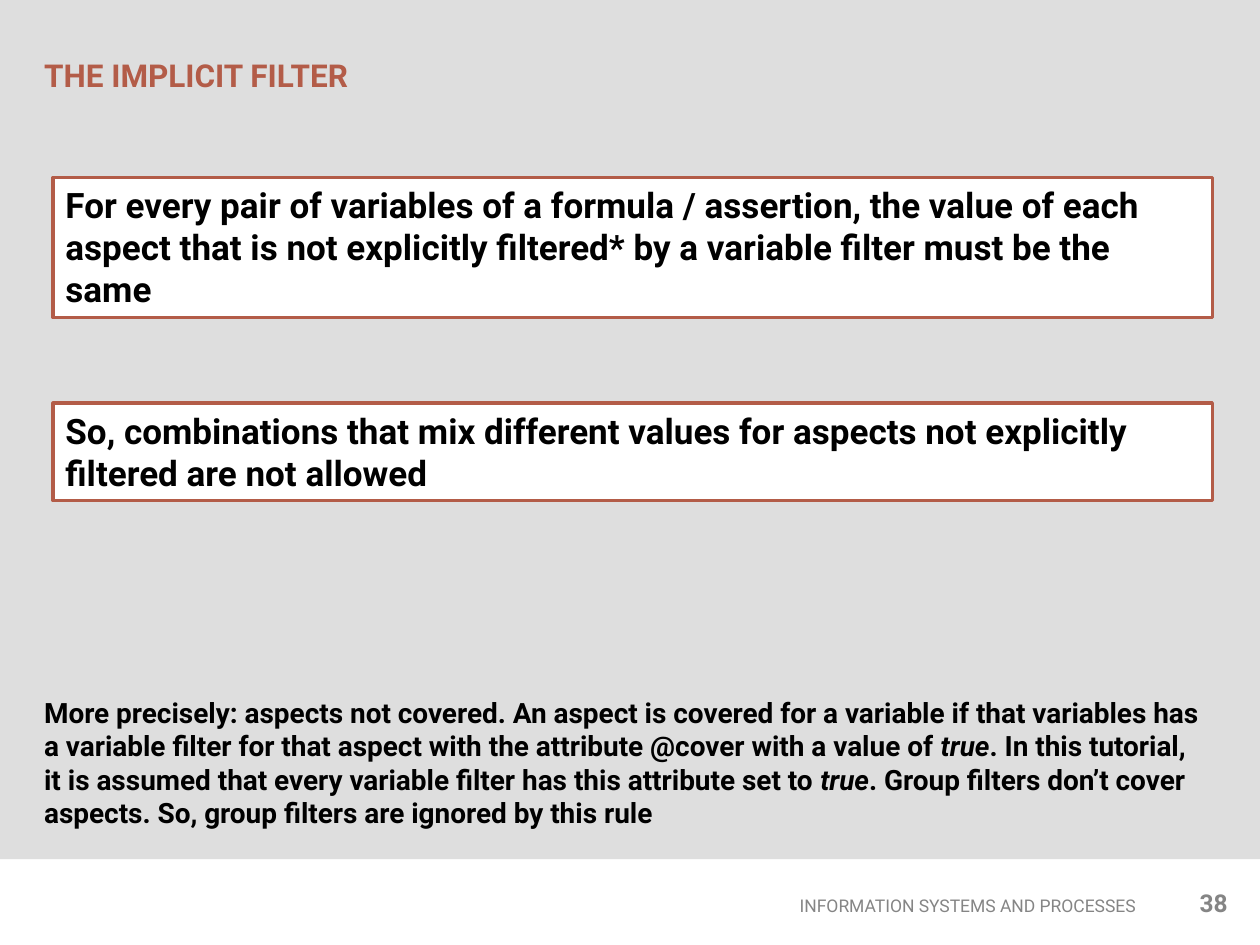
"""Build the slide about the implicit filter."""
from pptx import Presentation
from pptx.dml.color import RGBColor
from pptx.enum.shapes import MSO_SHAPE
from pptx.enum.text import MSO_ANCHOR, PP_ALIGN
from pptx.util import Cm, Pt

RECTANGLE = MSO_SHAPE.RECTANGLE
TOP, MIDDLE = MSO_ANCHOR.TOP, MSO_ANCHOR.MIDDLE
LEFT, RIGHT = PP_ALIGN.LEFT, PP_ALIGN.RIGHT

RUST = RGBColor(0xB3, 0x5C, 0x48)
PALE = RGBColor(0xDE, 0xDE, 0xDE)
GRAY = RGBColor(0x85, 0x85, 0x85)
BLACK = RGBColor(0x00, 0x00, 0x00)
WHITE = RGBColor(0xFF, 0xFF, 0xFF)


class SlideBuilder:
    font_name = "Roboto"
    line_width = Pt(2)

    def __init__(self, slide):
        self.slide = slide

    def fill_text(self, box, spans, size, color=BLACK, bold=True, align=LEFT, anchor=TOP):
        frame = box.text_frame
        frame.word_wrap = True
        frame.vertical_anchor = anchor
        para = frame.paragraphs[0]
        para.alignment = align
        for text, italic in spans:
            span = para.add_run()
            span.text = text
            font = span.font
            font.name = self.font_name
            font.size = Pt(size)
            font.bold = bold
            font.italic = italic
            font.color.rgb = color

    def label(self, place, spans, size, **style):
        box = self.slide.shapes.add_textbox(*map(Cm, place))
        self.fill_text(box, spans, size, **style)

    def panel(self, place, fill, line=None):
        box = self.slide.shapes.add_shape(RECTANGLE, *map(Cm, place))
        box.shadow.inherit = False
        box.fill.solid()
        box.fill.fore_color.rgb = fill
        if line is None:
            box.line.fill.background()
        else:
            box.line.color.rgb = line
            box.line.width = self.line_width
        return box

    def statement(self, top, height, text):
        box = self.panel((1.07, top, 23.37, height), WHITE, RUST)
        self.fill_text(box, [(text, False)], 20)


def main():
    deck = Presentation()
    deck.slide_width, deck.slide_height = Cm(25.4), Cm(19.05)
    page = SlideBuilder(deck.slides.add_slide(deck.slide_layouts[6]))

    page.panel((0, 0, 25.4, 17.32), PALE)
    page.label((7.82, 17.91, 15.32, 0.69), [("INFORMATION SYSTEMS AND PROCESSES", False)],
               10, color=GRAY, bold=False, align=RIGHT, anchor=MIDDLE)
    page.label((0.64, 0.3, 16.46, 2.41), [("THE IMPLICIT FILTER", False)],
               18, color=RUST, anchor=MIDDLE)
    page.label((23.55, 17.78, 1.45, 0.89), [("38", False)], 14, color=GRAY, align=RIGHT)

    page.statement(3.58, 2.82, "For every pair of variables of a formula / assertion, the value "
                   "of each aspect that is not explicitly filtered* by a variable filter "
                   "must be the same")
    page.statement(8.13, 1.96, "So, combinations that mix different values for aspects "
                   "not explicitly filtered are not allowed")

    page.label((0.64, 13.89, 23.8, 3), [
        ("More precisely: aspects not covered. An aspect is covered for a variable if that "
         "variables has a variable filter for that aspect with the attribute @cover with "
         "a value of ", False),
        ("true", True),
        (". In this tutorial, it is assumed that every variable filter has this attribute "
         "set to ", False),
        ("true", True),
        (". Group filters don’t cover aspects. So, group filters are ignored by this rule",
         False),
    ], 16)

    deck.save("out.pptx")


if __name__ == "__main__":
    main()
